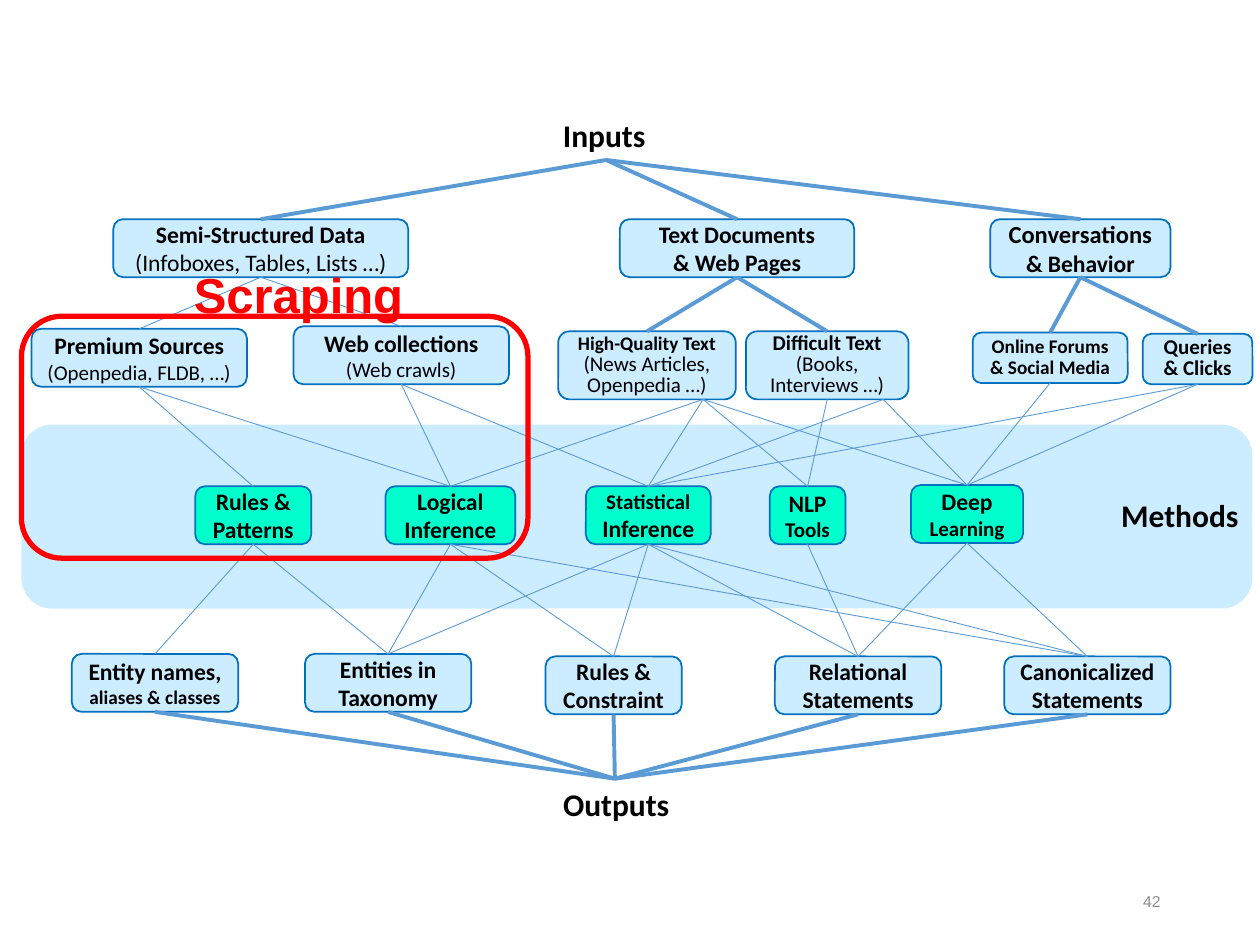
from dataclasses import dataclass

from lxml.etree import SubElement
from pptx import Presentation
from pptx.dml.color import RGBColor
from pptx.enum.shapes import MSO_CONNECTOR, MSO_SHAPE
from pptx.enum.text import MSO_ANCHOR, PP_ALIGN
from pptx.oxml.ns import qn
from pptx.util import Inches, Pt


@dataclass(frozen=True)
class Theme:
    pale: str = "CCECFF"
    mint: str = "00FFCC"
    border: str = "0070C0"
    link: str = "5B9BD5"
    ink: str = "000000"
    accent: str = "FF0000"
    muted: str = "8C8C8C"
    body_font: str = "Calibri"
    accent_font: str = "Arial"
    main: float = 13.5
    large: float = 14
    medium: float = 12
    small: float = 11
    label: float = 18
    callout: float = 28
    page: float = 9
    thick: float = 2.25
    thin: float = 0.5


THEME = Theme()
MAIN, LARGE, MEDIUM, SMALL = THEME.main, THEME.large, THEME.medium, THEME.small
BOLD, PLAIN = True, False
BOX_HEIGHT = 0.46

SOURCES = {
    "semi": (0.9, 1.74, 2.34, BOX_HEIGHT, [("Semi-Structured Data", MAIN, BOLD),
                                          ("(Infoboxes, Tables, Lists …)", MAIN, PLAIN)]),
    "docs": (4.92, 1.74, 1.86, BOX_HEIGHT, [("Text Documents", MAIN, BOLD), ("& Web Pages", MAIN, BOLD)]),
    "talk": (7.86, 1.74, 1.43, BOX_HEIGHT, [("Conversations", LARGE, BOLD), ("& Behavior", MAIN, BOLD)]),
    "premium": (0.25, 2.61, 1.71, BOX_HEIGHT, [("Premium Sources", MAIN, BOLD),
                                              ("(Openpedia, FLDB, …)", MEDIUM, PLAIN)]),
    "web": (2.33, 2.59, 1.71, BOX_HEIGHT, [("Web collections", MAIN, BOLD), ("(Web crawls)", MEDIUM, PLAIN)]),
}
TIGHT_SOURCES = {
    "quality": (4.43, 2.63, 1.41, 0.54, [("High-Quality Text", SMALL, BOLD),
                                         ("(News Articles, Openpedia …)", MEDIUM, PLAIN)]),
    "difficult": (5.92, 2.63, 1.29, 0.54, [("Difficult Text", MEDIUM, BOLD), ("(Books,", MEDIUM, PLAIN),
                                           ("Interviews …)", MEDIUM, PLAIN)]),
    "forums": (7.72, 2.64, 1.23, 0.4, [("Online Forums", SMALL, BOLD), ("& Social Media", SMALL, BOLD)]),
    "queries": (9.07, 2.65, 0.87, 0.4, [("Queries & Clicks", MEDIUM, BOLD)]),
}
METHODS = {
    "patterns": (1.55, 3.86, 0.92, BOX_HEIGHT, [("Rules & Patterns", MAIN, BOLD)]),
    "logic": (3.06, 3.86, 1.03, BOX_HEIGHT, [("Logical", MAIN, BOLD), ("Inference", MAIN, BOLD)]),
    "statistics": (4.65, 3.86, 0.99, BOX_HEIGHT, [("Statistical", MEDIUM, BOLD), ("Inference", MAIN, BOLD)]),
    "nlp": (6.11, 3.86, 0.6, BOX_HEIGHT, [("NLP", MAIN, BOLD), ("Tools", MEDIUM, BOLD)]),
    "deep": (7.23, 3.85, 0.89, BOX_HEIGHT, [("Deep", MAIN, BOLD), ("Learning", MEDIUM, BOLD)]),
}
RESULTS = {
    "names": (0.57, 5.19, 1.32, BOX_HEIGHT, [("Entity names,", MAIN, BOLD), ("aliases & classes", SMALL, BOLD)]),
    "taxonomy": (2.42, 5.19, 1.32, BOX_HEIGHT, [("Entities in", MAIN, BOLD), ("Taxonomy", MAIN, BOLD)]),
    "constraint": (4.33, 5.21, 1.08, BOX_HEIGHT, [("Rules &", MAIN, BOLD), ("Constraint", MAIN, BOLD)]),
    "relational": (6.15, 5.21, 1.32, BOX_HEIGHT, [("Relational", MAIN, BOLD), ("Statements", MAIN, BOLD)]),
    "canonical": (7.97, 5.21, 1.32, BOX_HEIGHT, [("Canonicalized", MAIN, BOLD), ("Statements", MAIN, BOLD)]),
}
BOXES = {**SOURCES, **TIGHT_SOURCES, **METHODS, **RESULTS}

INPUTS_HUB = (4.81, 1.27)
OUTPUTS_HUB = (4.88, 6.18)
SIDE_EXITS = {"quality": 5.58, "difficult": 7.01}
MAIN_LINKS = {"docs": ["quality", "difficult"], "talk": ["forums", "queries"]}
FINE_LINKS = {
    "semi": ["premium", "web"],
    "premium": ["patterns", "logic"],
    "web": ["logic", "statistics"],
    "quality": ["logic", "statistics", "nlp", "deep"],
    "difficult": ["statistics", "nlp", "deep"],
    "forums": ["deep"],
    "queries": ["statistics", "deep"],
    "patterns": ["names", "taxonomy"],
    "logic": ["taxonomy", "constraint", "canonical"],
    "statistics": ["taxonomy", "constraint", "relational", "canonical"],
    "nlp": ["relational"],
    "deep": ["relational", "canonical"],
}
LABELS = [("Inputs", 4.37, 0.87, 0.86), ("Outputs", 4.37, 6.18, 1.05), ("Methods", 8.8, 3.89, 1.14)]


def color(value):
    return RGBColor.from_string(value)


def style(paragraph, size, bold, ink=THEME.ink, face=THEME.body_font):
    for run in paragraph.runs:
        run.font.name, run.font.size, run.font.bold = face, Pt(size), bold
        run.font.color.rgb = color(ink)


def add_panel(slide, bounds, fill=None, border=None, width=1):
    panel = slide.shapes.add_shape(MSO_SHAPE.ROUNDED_RECTANGLE, *map(Inches, bounds))
    panel.shadow.inherit = False
    if fill:
        panel.fill.solid()
        panel.fill.fore_color.rgb = color(fill)
    else:
        panel.fill.background()
    if border:
        panel.line.color.rgb, panel.line.width = color(border), Pt(width)
    else:
        panel.line.fill.background()
    return panel


def add_box(slide, box, fill, spacing=None):
    *bounds, lines = box
    frame = add_panel(slide, bounds, fill, THEME.border).text_frame
    frame.text = "\n".join(text for text, _, _ in lines)
    frame.word_wrap, frame.vertical_anchor = True, MSO_ANCHOR.MIDDLE
    frame.margin_left = frame.margin_right = Inches(0.08)
    for paragraph, (_, size, bold) in zip(frame.paragraphs, lines):
        paragraph.alignment = PP_ALIGN.CENTER
        paragraph.line_spacing = spacing
        style(paragraph, size, bold)


def add_text(slide, text, bounds, size, bold=True, ink=THEME.ink, face=THEME.body_font, wrap=False):
    frame = slide.shapes.add_textbox(*map(Inches, bounds)).text_frame
    frame.text, frame.word_wrap = text, wrap
    style(frame.paragraphs[0], size, bold, ink, face)
    return frame


def add_link(slide, start, end, width):
    link = slide.shapes.add_connector(MSO_CONNECTOR.STRAIGHT, *map(Inches, (*start, *end)))
    link.line.color.rgb, link.line.width = color(THEME.link), Pt(width)
    SubElement(link._element.spPr, qn("a:effectLst"))


def top(name):
    left, upper, width, _, _ = BOXES[name]
    return left + width / 2, upper


def bottom(name):
    center, upper = top(name)
    return center, upper + BOXES[name][3]


def fine_exit(source, target):
    center, lower = bottom(source)
    straight_down = (source, target) == ("difficult", "nlp")
    return (center if straight_down else SIDE_EXITS.get(source, center)), lower


def main():
    """Build the slide that links inputs, methods and outputs."""
    deck = Presentation()
    deck.slide_width, deck.slide_height = Inches(10), Inches(7.5)
    slide = deck.slides.add_slide(deck.slide_layouts[6])

    add_panel(slide, (0.17, 3.37, 9.77, 1.46), THEME.pale)
    for group, fill, spacing in [(SOURCES, THEME.pale, None), (TIGHT_SOURCES, THEME.pale, Pt(12)),
                                 (METHODS, THEME.mint, None), (RESULTS, THEME.pale, None)]:
        for box in group.values():
            add_box(slide, box, fill, spacing)

    for name in ("semi", "docs", "talk"):
        add_link(slide, INPUTS_HUB, top(name), THEME.thick)
    for name in RESULTS:
        add_link(slide, bottom(name), OUTPUTS_HUB, THEME.thick)
    for source, targets in MAIN_LINKS.items():
        for target in targets:
            add_link(slide, bottom(source), top(target), THEME.thick)
    for source, targets in FINE_LINKS.items():
        for target in targets:
            add_link(slide, fine_exit(source, target), top(target), THEME.thin)

    for text, left, upper, width in LABELS:
        add_text(slide, text, (left, upper, width, 0.4), THEME.label)
    add_panel(slide, (0.17, 2.51, 4.02, 1.92), border=THEME.accent, width=3)
    add_text(slide, "Scraping", (1.44, 2.05, 2.64, 0.57), THEME.callout,
             ink=THEME.accent, face=THEME.accent_font, wrap=True)
    page = add_text(slide, "42", (7.06, 6.95, 2.25, 0.4), THEME.page, False,
                    THEME.muted, THEME.accent_font, True)
    page.vertical_anchor = MSO_ANCHOR.MIDDLE
    page.paragraphs[0].alignment = PP_ALIGN.RIGHT
    deck.save("out.pptx")


if __name__ == "__main__":
    main()
